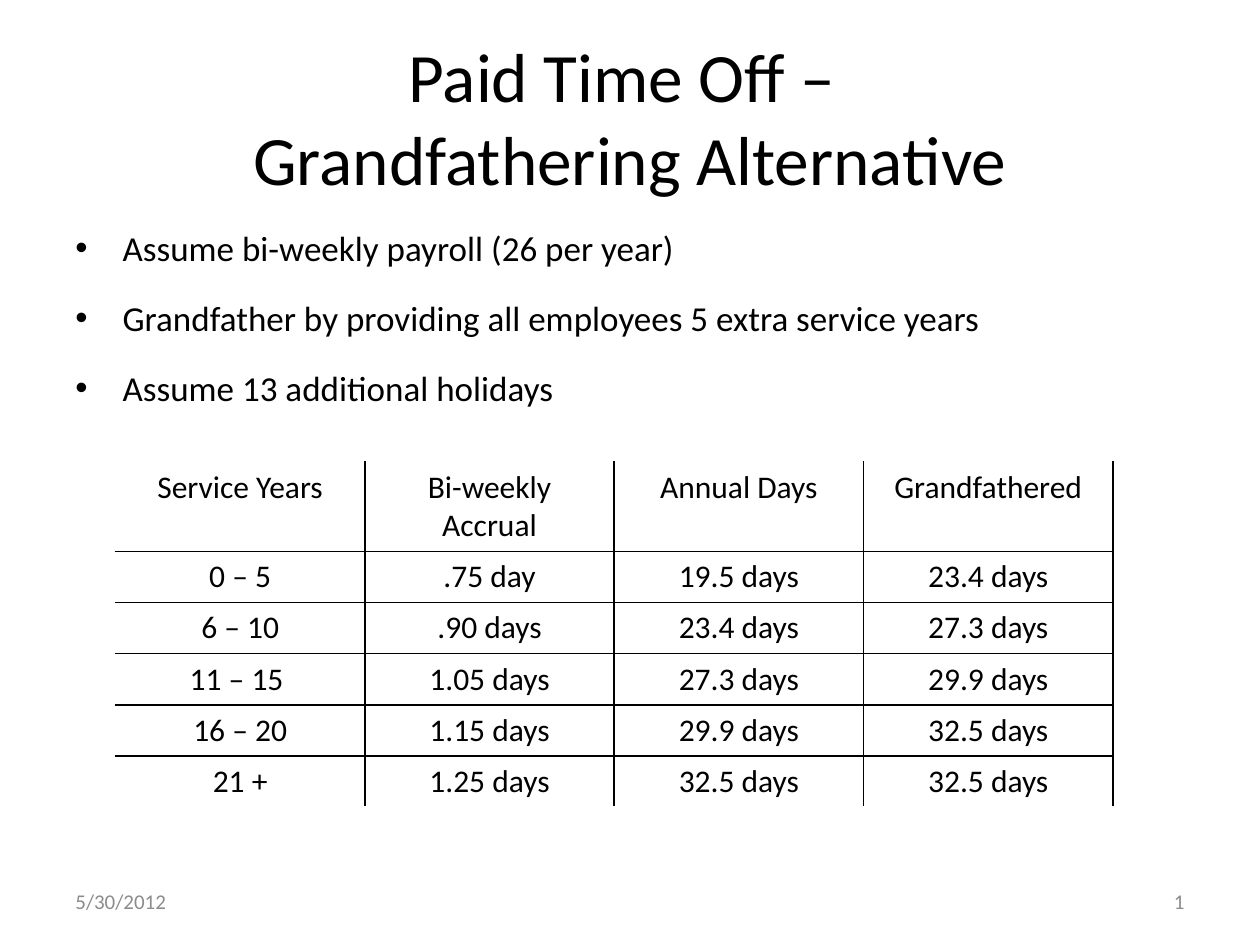
from lxml import etree
from pptx import Presentation
from pptx.dml.color import RGBColor
from pptx.enum.text import MSO_ANCHOR, MSO_AUTO_SIZE, PP_ALIGN
from pptx.oxml.ns import qn
from pptx.util import Pt

LEFT, CENTER, RIGHT = PP_ALIGN.LEFT, PP_ALIGN.CENTER, PP_ALIGN.RIGHT
TOP, MIDDLE = MSO_ANCHOR.TOP, MSO_ANCHOR.MIDDLE
NO_AUTOFIT = MSO_AUTO_SIZE.NONE
BLACK = RGBColor(0x00, 0x00, 0x00)
WHITE = RGBColor(0xFF, 0xFF, 0xFF)
GRAY = RGBColor(0x8C, 0x8C, 0x8C)
FONT = "Calibri"
TITLE_ONLY = 5

TITLE = "Paid Time Off – \vGrandfathering Alternative"
ASSUMPTIONS = [
    "Assume bi-weekly payroll (26 per year)",
    "Grandfather by providing all employees 5 extra service years",
    "Assume 13 additional holidays",
]
ACCRUALS = [
    ["Service Years", "Bi-weekly Accrual", "Annual Days", "Grandfathered"],
    ["0 – 5", ".75 day", "19.5 days", "23.4 days"],
    ["6 – 10", ".90 days", "23.4 days", "27.3 days"],
    ["11 – 15 ", "1.05 days", "27.3 days", "29.9 days"],
    ["16 – 20", "1.15 days", "29.9 days", "32.5 days"],
    ["21 +", "1.25 days", "32.5 days", "32.5 days"],
]


def apply(target, formats):
    for attribute, value in formats.items():
        setattr(target, attribute, value)


def format_paragraph(paragraph, size, color, **formats):
    apply(paragraph, formats)
    for run in paragraph.runs:
        apply(run.font, {"name": FONT, "size": Pt(size)})
        run.font.color.rgb = color


def place(shape, box):
    apply(shape, dict(zip(("left", "top", "width", "height"), map(Pt, box))))


def add_text(slide, box, text, anchor):
    frame = slide.shapes.add_textbox(*map(Pt, box)).text_frame
    apply(frame, {"word_wrap": True, "auto_size": NO_AUTOFIT,
                  "vertical_anchor": anchor, "text": text})
    return frame


def add_title(slide, box):
    title = slide.shapes.title
    place(title, box)
    apply(title.text_frame, {"text": TITLE, "word_wrap": True,
                             "auto_size": NO_AUTOFIT, "vertical_anchor": MIDDLE})
    format_paragraph(title.text_frame.paragraphs[0], 39.6, BLACK, alignment=CENTER)


def add_assumptions(slide, box):
    frame = add_text(slide, box, "\n".join(ASSUMPTIONS), TOP)
    for paragraph in frame.paragraphs:
        format_paragraph(paragraph, 20, BLACK, alignment=LEFT,
                         space_before=Pt(4), space_after=Pt(12))
        properties = paragraph._p.get_or_add_pPr()
        properties.set("marL", str(Pt(27)))
        properties.set("indent", str(-Pt(27)))
        etree.SubElement(properties, qn("a:buFont"), typeface="Arial")
        etree.SubElement(properties, qn("a:buChar"), char="•")


def add_border(cell, side, color):
    line = etree.SubElement(cell._tc.get_or_add_tcPr(), qn(f"a:ln{side}"), w=str(Pt(1)))
    fill = etree.SubElement(line, qn("a:solidFill"))
    etree.SubElement(fill, qn("a:srgbClr"), val=str(color))


def add_accruals(slide, box):
    row_count, column_count = len(ACCRUALS), len(ACCRUALS[0])
    table = slide.shapes.add_table(row_count, column_count, *map(Pt, box)).table
    apply(table, {"first_row": False, "horz_banding": False})
    for column in table.columns:
        column.width = Pt(box[2] / column_count)
    for row in table.rows:
        row.height = Pt(box[3] / row_count)
    for r, values in enumerate(ACCRUALS):
        for c, value in enumerate(values):
            cell = table.cell(r, c)
            cell.text = value
            format_paragraph(cell.text_frame.paragraphs[0], 18, BLACK, alignment=CENTER)
            open_sides = {"L": c == 0, "R": False, "T": r == 0, "B": r == row_count - 1}
            for side, is_open in open_sides.items():
                add_border(cell, side, WHITE if is_open else BLACK)
            cell.fill.background()


def add_footer(slide, box):
    left, top, width, height = box
    part_width = 168
    parts = [("5/30/2012", left, LEFT), ("1", left + width - part_width, RIGHT)]
    for text, part_left, alignment in parts:
        frame = add_text(slide, (part_left, top, part_width, height), text, MIDDLE)
        format_paragraph(frame.paragraphs[0], 12, GRAY, alignment=alignment)


def main():
    deck = Presentation()
    apply(deck, {"slide_width": Pt(720), "slide_height": Pt(540)})
    slide = deck.slides.add_slide(deck.slide_layouts[TITLE_ONLY])
    add_title(slide, (36, 21.6, 648, 90))
    add_assumptions(slide, (36, 126, 648, 384))
    add_footer(slide, (36, 500.5, 648, 28.75))
    add_accruals(slide, (66, 264, 570, 175.2))
    deck.save("out.pptx")


if __name__ == "__main__":
    main()
